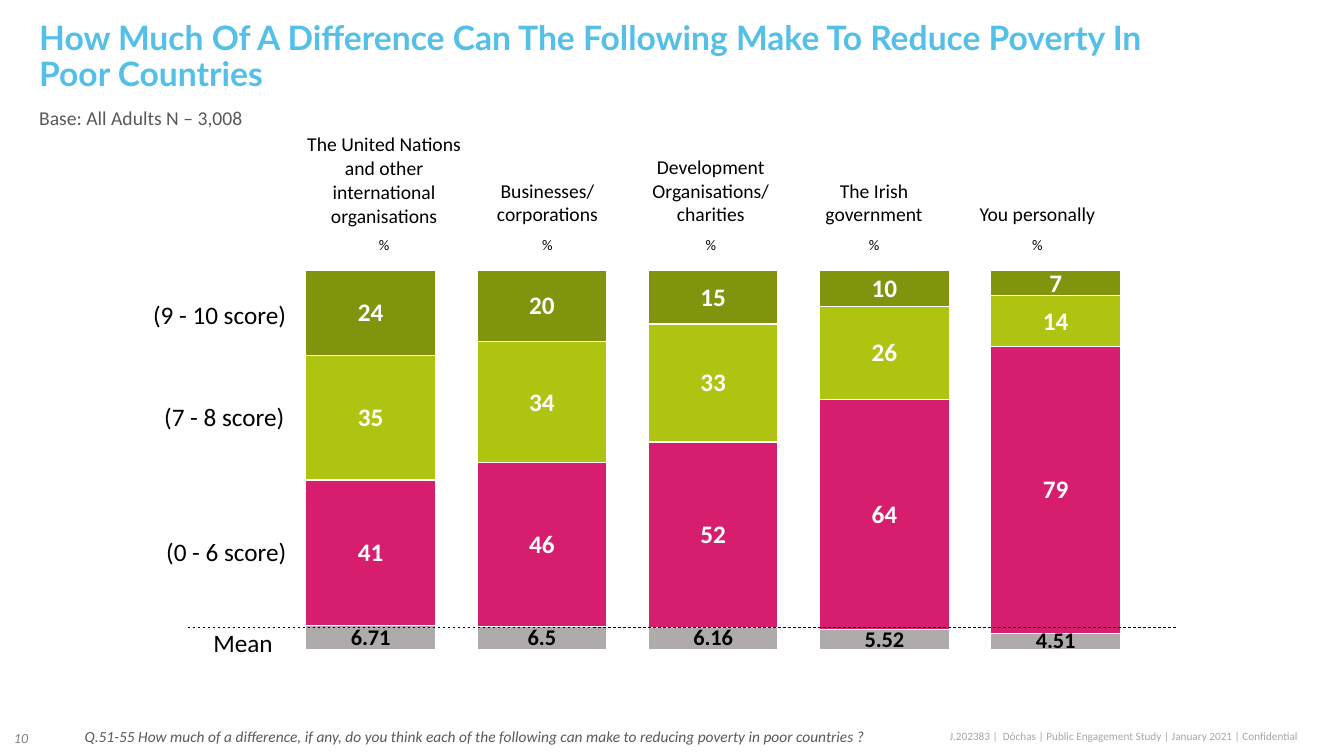
from lxml.etree import SubElement
from pptx import Presentation
from pptx.chart.data import CategoryChartData
from pptx.dml.color import RGBColor
from pptx.enum.chart import XL_CHART_TYPE, XL_LABEL_POSITION
from pptx.enum.dml import MSO_LINE
from pptx.enum.shapes import MSO_CONNECTOR
from pptx.enum.text import MSO_ANCHOR, PP_ALIGN
from pptx.oxml import parse_xml
from pptx.oxml.ns import nsdecls, qn
from pptx.util import Pt

EMU_PER_PX = 9144
BLACK, WHITE, GREY = "000000", "FFFFFF", "595959"
GROUPS = [
    "The United Nations and other international organisations",
    "Businesses/ corporations",
    "Development Organisations/ charities",
    "The Irish government",
    "You personally",
]
SCORES = [
    ("9 - 10 score", [24, 20, 15, 10, 7], "82930D", WHITE, 18),
    ("7 - 8 score", [35, 34, 33, 26, 14], "AEC411", WHITE, 18),
    ("0 - 6 score", [41, 46, 52, 64, 79], "D61D6E", WHITE, 18),
    ("Mean", [6.71, 6.5, 6.16, 5.52, 4.51], "AFABAB", BLACK, 16),
]


def px(length):
    return length * EMU_PER_PX


def color(hex_string):
    return RGBColor.from_string(hex_string)


def style_font(font, size, hex_string, name="Calibri", bold=False, italic=False):
    font.size = Pt(size)
    font.name = name
    font.bold = bold
    font.italic = italic
    font.color.rgb = color(hex_string)


def add_text(slide, box, text, size, hex_string, align=PP_ALIGN.LEFT,
             anchor=MSO_ANCHOR.TOP, spacing=1.0, **style):
    shape = slide.shapes.add_textbox(*map(px, box))
    frame = shape.text_frame
    frame.word_wrap = True
    frame.vertical_anchor = anchor
    frame.text = text
    paragraph = frame.paragraphs[0]
    paragraph.alignment = align
    paragraph.line_spacing = spacing
    style_font(paragraph.runs[0].font, size, hex_string, **style)


def add_heading(slide, left, top):
    add_text(slide, (left, top, 1151, 41),
             "How Much Of A Difference Can The Following Make To Reduce Poverty In Poor Countries",
             24, "54C0E8", spacing=0.9, name="Lato", bold=True)
    add_text(slide, (left, top + 87, 747, 35), "Base: All Adults N – 3,008",
             14, GREY, spacing=0.9)


def add_group_table(slide, left, top, width, height):
    frame = slide.shapes.add_table(2, len(GROUPS), *map(px, (left, top, width, height)))
    table = frame.table
    table.first_row = False
    table.horz_banding = False
    for row, row_height in zip(table.rows, (89, 27)):
        row.height = px(row_height)
    frame.height = px(height)
    for column, group in enumerate(GROUPS):
        for row, (text, size) in enumerate([(group, 14), ("%", 10.5)]):
            cell = table.cell(row, column)
            cell.fill.background()
            cell.vertical_anchor = MSO_ANCHOR.BOTTOM
            cell.margin_left = cell.margin_right = cell.margin_top = px(1)
            cell.margin_bottom = 0
            cell.text = text
            paragraph = cell.text_frame.paragraphs[0]
            paragraph.alignment = PP_ALIGN.CENTER
            style_font(paragraph.runs[0].font, size, BLACK)


def set_plot_layout(chart, x, y, width, height):
    plot_area = chart._chartSpace.chart.plotArea
    for old_layout in plot_area.findall(qn("c:layout")):
        plot_area.remove(old_layout)
    layout = parse_xml(f"<c:layout {nsdecls('c')}><c:manualLayout/></c:layout>")
    settings = [("layoutTarget", "inner"), ("xMode", "edge"), ("yMode", "edge"),
                ("x", x), ("y", y), ("w", width), ("h", height)]
    for tag, value in settings:
        SubElement(layout[0], qn(f"c:{tag}")).set("val", str(value))
    plot_area.insert(0, layout)


def add_score_chart(slide, left, top, width, height):
    data = CategoryChartData()
    data.categories = GROUPS
    for name, values, *_ in SCORES:
        data.add_series(name, values)
    chart = slide.shapes.add_chart(XL_CHART_TYPE.COLUMN_STACKED_100,
                                   *map(px, (left, top, width, height)), data).chart
    style_font(chart.font, 16, BLACK, name="Arial", bold=True)
    chart.has_legend = False
    chart.has_title = False
    chart.category_axis.visible = False
    chart.value_axis.visible = False
    chart.value_axis.has_major_gridlines = False
    chart.value_axis.reverse_order = True
    plot = chart.plots[0]
    plot.gap_width = 32
    plot.overlap = 100
    plot.vary_by_categories = False
    for series, (_, _, fill, label_color, label_size) in zip(plot.series, SCORES):
        series.format.fill.solid()
        series.format.fill.fore_color.rgb = color(fill)
        series.format.line.color.rgb = color(WHITE)
        series.format.line.width = Pt(1)
        labels = series.data_labels
        labels.show_value = True
        labels.position = XL_LABEL_POSITION.CENTER
        style_font(labels.font, label_size, label_color, bold=True)
    set_plot_layout(chart, 0.05, 0.03, 0.95, 0.92)


def add_mean_line(slide, left, top, width):
    line = slide.shapes.add_connector(MSO_CONNECTOR.STRAIGHT,
                                      *map(px, (left, top, left + width, top)))
    line.line.color.rgb = color(BLACK)
    line.line.width = Pt(0.5)
    line.line.dash_style = MSO_LINE.DASH
    SubElement(line._element.spPr, qn("a:effectLst"))


def add_score_labels(slide, left, top):
    labels = [("(9 - 10 score)", 0, 0, PP_ALIGN.LEFT),
              ("(7 - 8 score)", 11, 101, PP_ALIGN.LEFT),
              ("(0 - 6 score)", 13, 235, PP_ALIGN.LEFT),
              ("Mean", 13, 325, PP_ALIGN.CENTER)]
    for text, across, down, align in labels:
        add_text(slide, (left + across, top + down, 172, 40), text, 18, BLACK, align=align)


def add_footer(slide, left, top):
    add_text(slide, (left, top, 58, 40), "10", 10, "808080",
             anchor=MSO_ANCHOR.MIDDLE, italic=True)
    add_text(slide, (left + 70, top + 6, 811, 31),
             "Q.51-55 How much of a difference, if any, do you think each of the following "
             "can make to reducing poverty in poor countries ?",
             11, GREY, spacing=0.9, italic=True)
    add_text(slide, (left + 928, top + 7, 465, 24),
             "J.202383 |  Dóchas | Public Engagement Study | January 2021 | Confidential",
             8, "A6A6A6")


def main():
    presentation = Presentation()
    presentation.slide_width = px(1333)
    presentation.slide_height = px(750)
    slide = presentation.slides.add_slide(presentation.slide_layouts[6])
    add_heading(slide, 29, 16)
    add_score_chart(slide, 238, 256, 894, 409)
    add_mean_line(slide, 186, 622, 981)
    add_group_table(slide, 300, 131, 810, 121)
    add_score_labels(slide, 142, 292)
    add_footer(slide, 4, 712)
    presentation.save("out.pptx")


if __name__ == "__main__":
    main()
